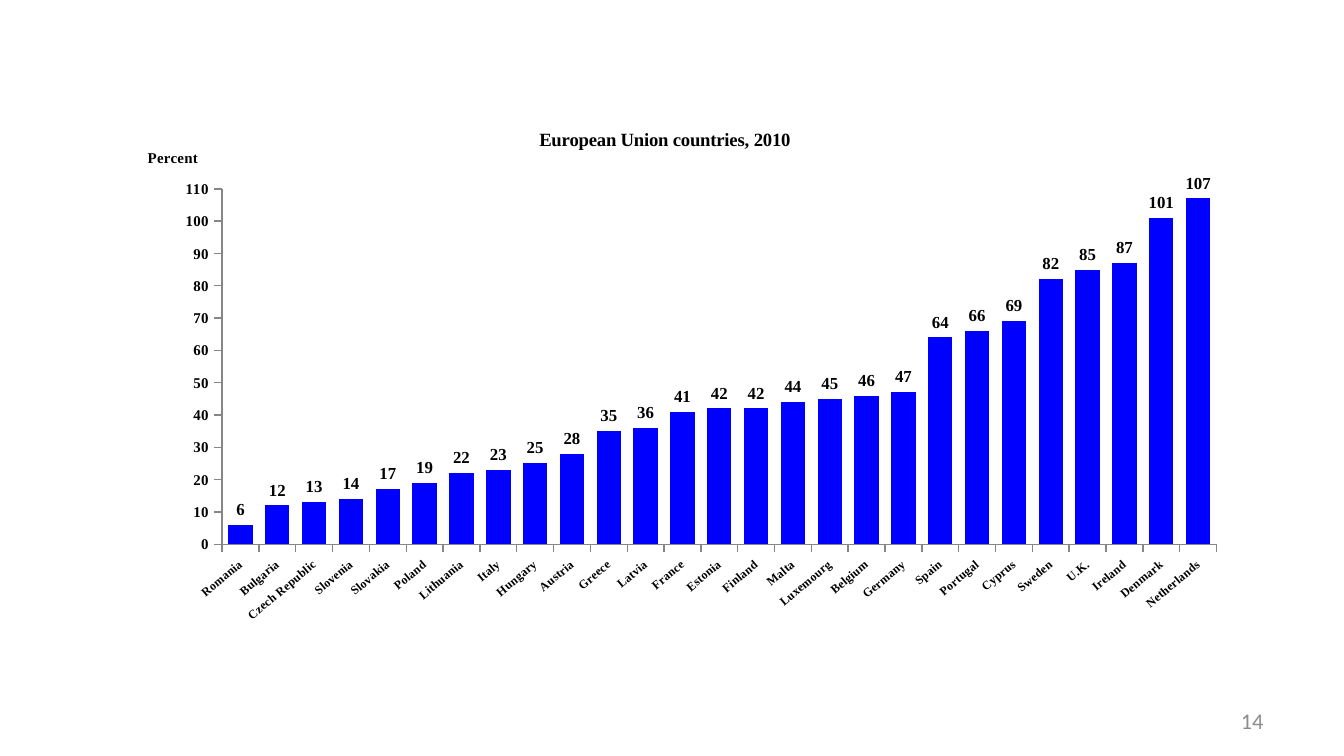
from pptx import Presentation
from pptx.chart.data import CategoryChartData
from pptx.dml.color import RGBColor
from pptx.enum.chart import XL_CHART_TYPE, XL_LABEL_POSITION, XL_TICK_MARK
from pptx.enum.text import MSO_ANCHOR, PP_ALIGN
from pptx.oxml.ns import qn
from pptx.oxml.xmlchemy import OxmlElement
from pptx.util import Cm, Pt

BLACK = RGBColor(0, 0, 0)
BLUE = RGBColor(0, 0, 255)
GRAY = RGBColor(0x86, 0x86, 0x86)
PALE = RGBColor(0x8C, 0x8C, 0x8C)

RATES = {
    "Romania": 6, "Bulgaria": 12, "Czech Republic": 13, "Slovenia": 14,
    "Slovakia": 17, "Poland": 19, "Lithuania": 22, "Italy": 23,
    "Hungary": 25, "Austria": 28, "Greece": 35, "Latvia": 36,
    "France": 41, "Estonia": 42, "Finland": 42, "Malta": 44,
    "Luxemourg": 45, "Belgium": 46, "Germany": 47, "Spain": 64,
    "Portugal": 66, "Cyprus": 69, "Sweden": 82, "U.K.": 85,
    "Ireland": 87, "Denmark": 101, "Netherlands": 107,
}


class Page:
    serif = "Times New Roman"
    sans = "Calibri"

    def __init__(self, slide):
        self.slide = slide

    def style(self, font, size, color=BLACK, bold=True, name=serif):
        font.name, font.size, font.bold = name, Pt(size), bold
        font.color.rgb = color

    def place(self, parent, **spots):
        """Set a manual layout, in fractions of the chart."""
        layout = parent.find(qn("c:layout"))
        if layout is None:
            layout = OxmlElement("c:layout")
            parent.insert(0, layout)
        manual = OxmlElement("c:manualLayout")
        layout.append(manual)
        modes = {"xMode": "edge", "yMode": "edge"}
        if "w" in spots:
            modes = {"layoutTarget": "inner", **modes}
        for tag, val in {**modes, **spots}.items():
            node = OxmlElement(f"c:{tag}")
            node.set("val", str(val))
            manual.append(node)

    def title(self, title, text, size, x, y):
        frame = title.text_frame
        frame.text = text
        self.style(frame.paragraphs[0].runs[0].font, size)
        frame._txBody.find(qn("a:bodyPr")).set("rot", "0")
        self.place(title._element, x=x, y=y)

    def axis(self, axis, size):
        axis.has_major_gridlines = False
        axis.major_tick_mark = XL_TICK_MARK.OUTSIDE
        axis.minor_tick_mark = XL_TICK_MARK.NONE
        axis.format.line.color.rgb = GRAY
        axis.format.line.width = Pt(0.75)
        self.style(axis.tick_labels.font, size)

    def chart(self, rates, left, top, width, height):
        data = CategoryChartData(number_format="0")
        data.categories = list(rates)
        data.add_series("Series 1", list(rates.values()))
        chart = self.slide.shapes.add_chart(
            XL_CHART_TYPE.COLUMN_CLUSTERED,
            Cm(left), Cm(top), Cm(width), Cm(height), data).chart
        self.style(chart.font, 10, bold=False)
        chart.has_legend = False
        chart.has_title = True
        self.title(chart.chart_title, "European Union countries, 2010", 10, 0.36, 0.01)
        area = chart._chartSpace.find(".//" + qn("c:plotArea"))
        self.place(area, x=0.071, y=0.133, w=0.916, h=0.672)

        # Axes
        names, scale = chart.category_axis, chart.value_axis
        self.axis(names, 6.5)
        body = names._element.find(qn("c:txPr")).find(qn("a:bodyPr"))
        body.set("rot", str(-40 * 60000))
        body.set("vert", "horz")
        self.axis(scale, 8)
        scale.minimum_scale, scale.maximum_scale = 0, 110
        scale.major_unit = 10
        scale.tick_labels.number_format = "0"
        scale.tick_labels.number_format_is_linked = False
        self.title(scale.axis_title, "Percent", 8, 0, 0.05)

        # Columns and their labels
        plot = chart.plots[0]
        plot.gap_width = 51
        plot.vary_by_categories = False
        fill = plot.series[0].format.fill
        fill.solid()
        fill.fore_color.rgb = BLUE
        plot.has_data_labels = True
        labels = plot.data_labels
        labels.show_value = True
        labels.position = XL_LABEL_POSITION.OUTSIDE_END
        labels.number_format = "0"
        labels.number_format_is_linked = False
        self.style(labels.font, 9)

    def number(self, text, left, top, width, height):
        frame = self.slide.shapes.add_textbox(
            Cm(left), Cm(top), Cm(width), Cm(height)).text_frame
        frame.word_wrap = True
        frame.vertical_anchor = MSO_ANCHOR.MIDDLE
        frame.text = text
        line = frame.paragraphs[0]
        line.alignment = PP_ALIGN.RIGHT
        self.style(line.runs[0].font, 12, PALE, False, self.sans)


def main():
    deck = Presentation()
    deck.slide_width, deck.slide_height = Cm(25.4), Cm(14.29)
    page = Page(deck.slides.add_slide(deck.slide_layouts[6]))
    # Page number, then the chart
    page.number("14", 18.2, 13.24, 5.93, 0.76)
    page.chart(RATES, 2.74, 2.24, 20.52, 10)
    deck.save("out.pptx")


if __name__ == "__main__":
    main()
